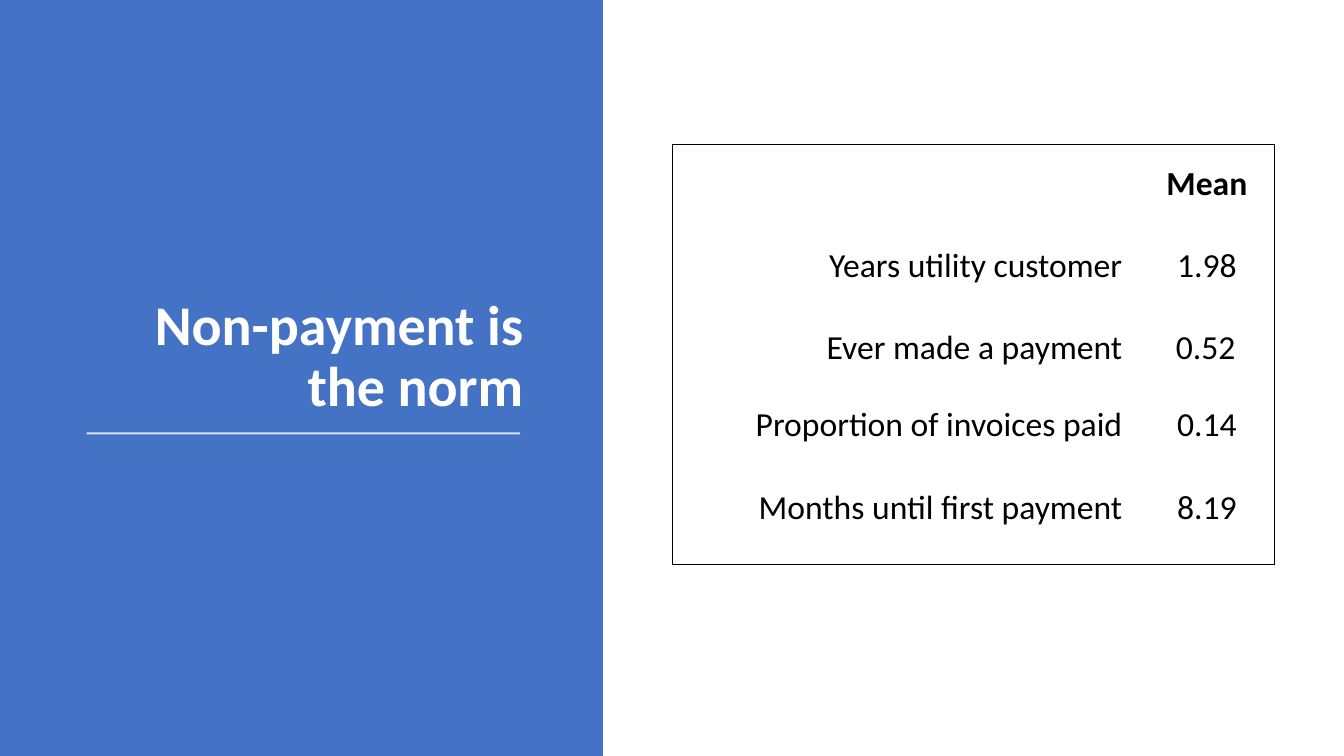
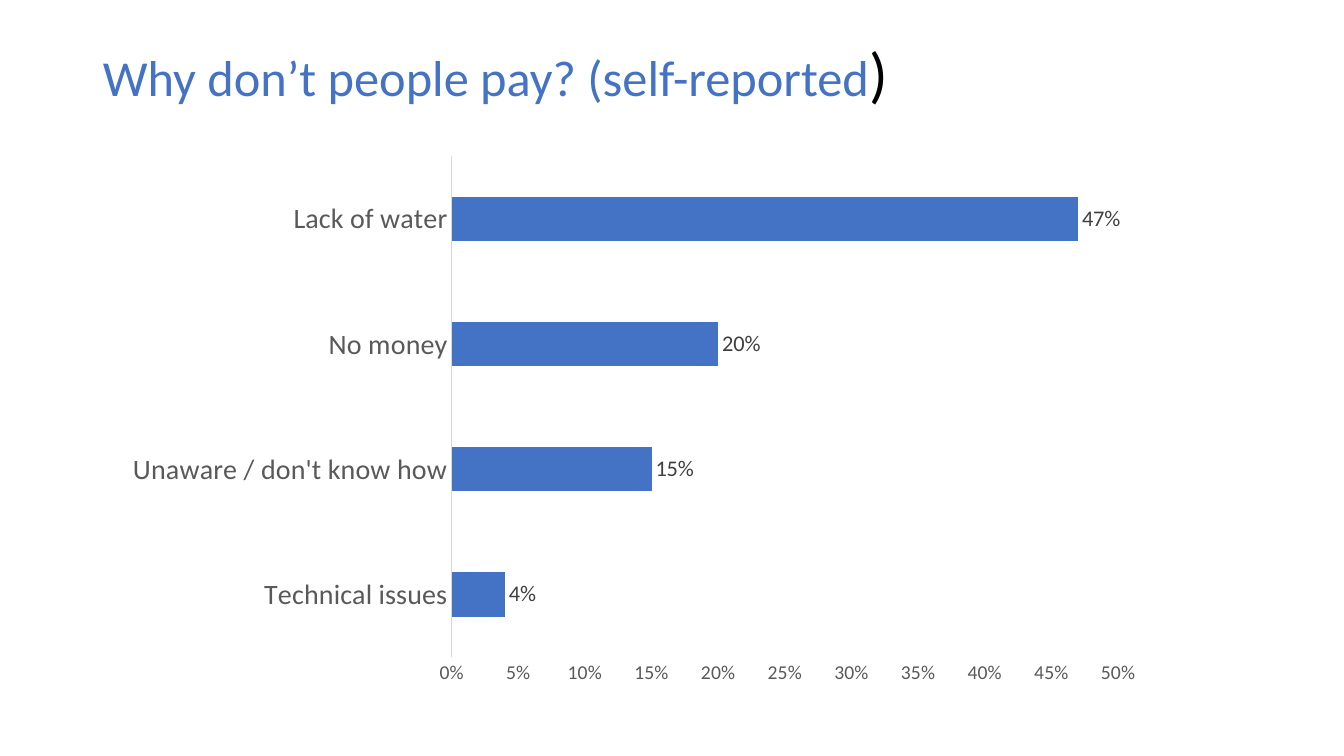
from dataclasses import dataclass

from lxml import etree
from pptx import Presentation
from pptx.chart import data as chart_data
from pptx.dml.color import RGBColor
from pptx.enum import chart as charts, shapes, text
from pptx.oxml import ns, parse_xml
from pptx.util import Inches, Pt

FONT = "Calibri"
BLUE = RGBColor(0x44, 0x72, 0xC4)
WHITE = RGBColor(0xFF, 0xFF, 0xFF)
BLACK = RGBColor(0x00, 0x00, 0x00)
AXIS_GREY = RGBColor(0x59, 0x59, 0x59)
LABEL_GREY = RGBColor(0x40, 0x40, 0x40)
LINE_GREY = RGBColor(0xD9, 0xD9, 0xD9)
PLAIN_TABLE = "{2D5ABB26-0587-4C30-8999-92F81FD0307C}"
TITLE_ONLY = 5


@dataclass(frozen=True)
class Box:
    left: float
    top: float
    width: float
    height: float

    def lengths(self) -> list[Inches]:
        return [Inches(n) for n in (self.left, self.top, self.width, self.height)]


@dataclass(frozen=True)
class Measure:
    label: str
    mean: str
    height: float = 0.7
    scale: float = 1.0


@dataclass(frozen=True)
class Reason:
    name: str
    share: float


MEASURES = [
    Measure("", "Mean", height=0.96),
    Measure("Years utility customer", "1.98"),
    Measure("Ever made a payment", "0.52", scale=0.86),
    Measure("Proportion of invoices paid", "0.14"),
    Measure("Months until first payment", "8.19"),
]
REASONS = [
    Reason("Technical issues", 0.04),
    Reason("Unaware / don't know how", 0.15),
    Reason("No money", 0.20),
    Reason("Lack of water", 0.47),
]


def style_font(font, size: float, color: RGBColor, bold: bool = False) -> None:
    font.name = FONT
    font.size = Pt(size)
    font.bold = bold
    font.color.rgb = color


def write(paragraph, content: str, *, size: float, color: RGBColor,
          bold: bool = False, align=text.PP_ALIGN.LEFT) -> None:
    paragraph.alignment = align
    run = paragraph.add_run()
    run.text = content
    style_font(run.font, size, color, bold)


def place_title(slide, box: Box, anchor):
    title = slide.shapes.title
    title.left, title.top, title.width, title.height = box.lengths()
    frame = title.text_frame
    frame.word_wrap = True
    frame.auto_size = text.MSO_AUTO_SIZE.NONE
    frame.vertical_anchor = anchor
    paragraph = frame.paragraphs[0]
    paragraph.line_spacing = 0.9
    return paragraph


def add_panel(slide, box: Box) -> None:
    panel = slide.shapes.add_shape(shapes.MSO_SHAPE.RECTANGLE, *box.lengths())
    panel.shadow.inherit = False
    panel.fill.solid()
    panel.fill.fore_color.rgb = BLUE
    panel.line.fill.background()
    tree = slide.shapes.element
    tree.remove(panel.element)
    tree.insert(2, panel.element)


def add_rule(slide, left: float, right: float, top: float) -> None:
    rule = slide.shapes.add_connector(
        shapes.MSO_CONNECTOR.STRAIGHT,
        Inches(left), Inches(top), Inches(right), Inches(top))
    rule.line.color.rgb = WHITE
    rule.line.width = Pt(1.5)
    color = rule.element.find(".//" + ns.qn("a:srgbClr"))
    etree.SubElement(color, ns.qn("a:alpha"), val="80000")
    etree.SubElement(rule.element.spPr, ns.qn("a:effectLst"))


def border_table(frame, rows: int) -> None:
    for number, properties in enumerate(frame.element.iter(ns.qn("a:tcPr"))):
        row, column = divmod(number, 2)
        sides = ["LR"[column]] + ["T"] * (row == 0) + ["B"] * (row == rows - 1)
        for index, side in enumerate(sides):
            properties.insert(index, parse_xml(
                f'<a:ln{side} {ns.nsdecls("a")} w="{Pt(1)}"><a:solidFill>'
                f'<a:srgbClr val="{BLACK}"/></a:solidFill></a:ln{side}>'))


def add_measure_table(slide, box: Box, measures: list[Measure]) -> None:
    frame = slide.shapes.add_table(len(measures), 2, *box.lengths())
    frame.element.find(".//" + ns.qn("a:tableStyleId")).text = PLAIN_TABLE
    table = frame.table
    table.first_row = table.horz_banding = False
    for column, width in zip(table.columns, (4.48, 1.49)):
        column.width = Inches(width)
    for row, measure in enumerate(measures):
        table.rows[row].height = Inches(measure.height)
        contents = ((measure.label, text.PP_ALIGN.RIGHT),
                    (measure.mean, text.PP_ALIGN.CENTER))
        for column, (content, align) in enumerate(contents):
            cell = table.cell(row, column)
            cell.fill.background()
            cell.vertical_anchor = (text.MSO_ANCHOR.MIDDLE if row
                                    else text.MSO_ANCHOR.BOTTOM)
            cell.margin_left = Inches(0.17 * measure.scale)
            cell.margin_top = Inches(0.05 * measure.scale)
            cell.margin_right = Inches(0.02)
            cell.margin_bottom = Inches(0.36 * measure.scale)
            if content:
                write(cell.text_frame.paragraphs[0], content, size=24,
                      color=BLACK, bold=row == 0, align=align)
    border_table(frame, len(measures))


def set_plot_area(chart, box: Box, area: Box) -> None:
    plot_area = chart.element.find(".//" + ns.qn("c:plotArea"))
    for layout in plot_area.findall(ns.qn("c:layout")):
        plot_area.remove(layout)
    layout = etree.Element(ns.qn("c:layout"))
    manual = etree.SubElement(layout, ns.qn("c:manualLayout"))
    settings = (("layoutTarget", "inner"), ("xMode", "edge"), ("yMode", "edge"),
                ("x", (area.left - box.left) / box.width),
                ("y", (area.top - box.top) / box.height),
                ("w", area.width / box.width),
                ("h", area.height / box.height))
    for name, value in settings:
        etree.SubElement(manual, ns.qn("c:" + name), val=str(value))
    plot_area.insert(0, layout)


def add_reason_chart(slide, box: Box, area: Box, reasons: list[Reason]) -> None:
    values = chart_data.CategoryChartData(number_format="0%")
    values.categories = [reason.name for reason in reasons]
    values.add_series("Series 1", [reason.share for reason in reasons])
    chart = slide.shapes.add_chart(
        charts.XL_CHART_TYPE.BAR_CLUSTERED, *box.lengths(), values).chart
    chart.has_legend = chart.has_title = False
    style_font(chart.font, 10, BLACK)
    set_plot_area(chart, box, area)

    for axis, size in ((chart.category_axis, 20), (chart.value_axis, 14)):
        axis.has_major_gridlines = False
        axis.major_tick_mark = axis.minor_tick_mark = charts.XL_TICK_MARK.NONE
        style_font(axis.tick_labels.font, size, AXIS_GREY)
    chart.category_axis.format.line.color.rgb = LINE_GREY
    chart.category_axis.format.line.width = Pt(0.75)
    value_axis = chart.value_axis
    value_axis.format.line.fill.background()
    value_axis.minimum_scale, value_axis.maximum_scale = 0, 0.5
    value_axis.major_unit = 0.05
    value_axis.tick_labels.number_format = "0%"
    value_axis.tick_labels.number_format_is_linked = False

    plot = chart.plots[0]
    plot.gap_width = 182
    plot.vary_by_categories = False
    series = plot.series[0]
    series.format.fill.solid()
    series.format.fill.fore_color.rgb = BLUE
    labels = series.data_labels
    labels.show_value = True
    labels.position = charts.XL_LABEL_POSITION.OUTSIDE_END
    labels.number_format = "0%"
    labels.number_format_is_linked = False
    style_font(labels.font, 16, LABEL_GREY)


def build_payment_slide(slide) -> None:
    add_panel(slide, Box(0, 0, 5.98, 7.5))
    title = place_title(slide, Box(0.69, 0.88, 4.6, 3.32), text.MSO_ANCHOR.BOTTOM)
    write(title, "Non-payment is the norm", size=40, color=WHITE, bold=True,
          align=text.PP_ALIGN.RIGHT)
    add_rule(slide, 0.86, 5.16, 4.3)
    add_measure_table(slide, Box(6.67, 1.43, 5.97, 4.14), MEASURES)


def build_reason_slide(slide) -> None:
    title = place_title(slide, Box(0.92, 0.22, 11.5, 1.08), text.MSO_ANCHOR.MIDDLE)
    write(title, "Why don’t people pay? (self-reported", size=36, color=BLUE)
    write(title, ")", size=44, color=BLACK)
    add_reason_chart(slide, Box(1.12, 1.44, 10.36, 5.46),
                     Box(4.48, 1.55, 6.61, 4.97), REASONS)


def main() -> None:
    presentation = Presentation()
    presentation.slide_width = Inches(13.33)
    presentation.slide_height = Inches(7.5)
    layout = presentation.slide_layouts[TITLE_ONLY]
    for build in (build_payment_slide, build_reason_slide):
        build(presentation.slides.add_slide(layout))
    presentation.save("out.pptx")


if __name__ == "__main__":
    main()
